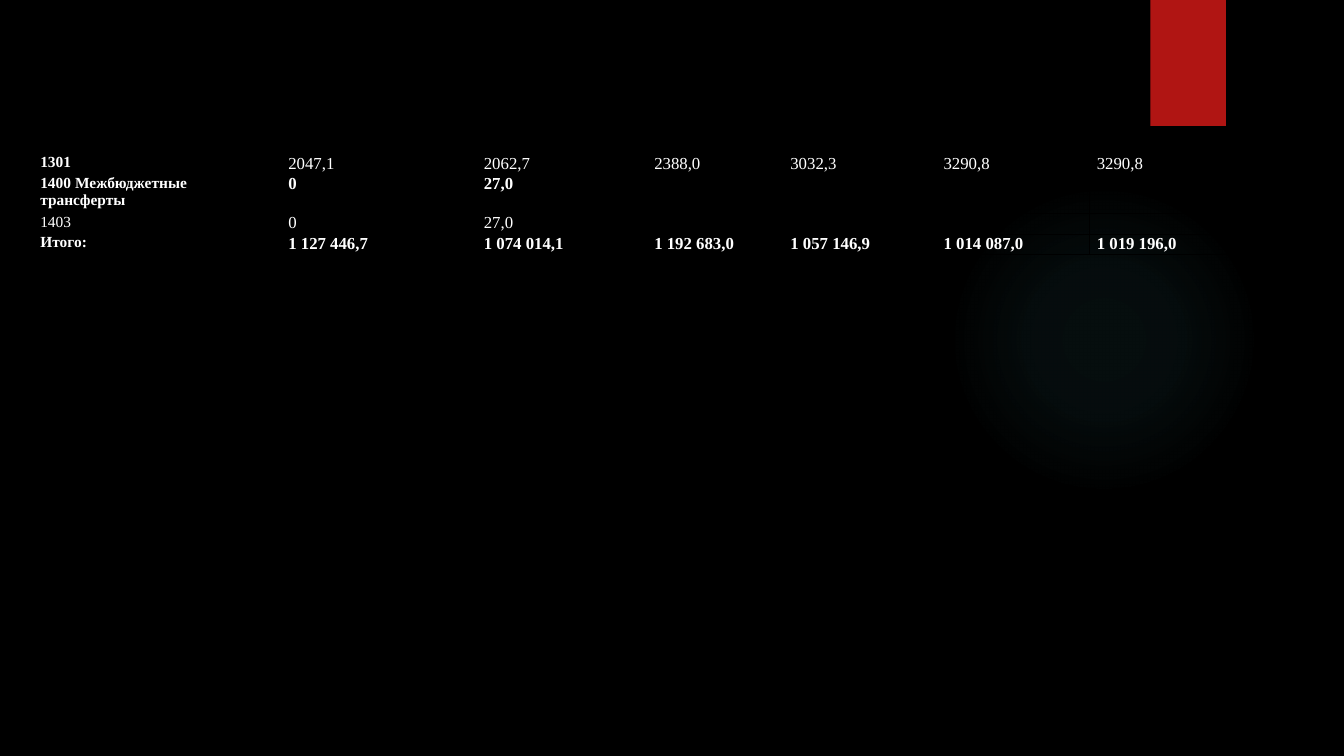
"""Builds the closing budget table slide with a red tab and a soft glow."""
from dataclasses import dataclass

from lxml import etree
from pptx import Presentation
from pptx.dml.color import RGBColor
from pptx.enum import shapes
from pptx.oxml import ns
from pptx.util import Inches, Pt

BUDGET = [
    ("1301", "2047,1", "2062,7", "2388,0", "3032,3", "3290,8", "3290,8"),
    ("1400 Межбюджетные трансферты", "0", "27,0", "", "", "", ""),
    ("1403", "0", "27,0", "", "", "", ""),
    ("Итого:", "1 127 446,7", "1 074 014,1", "1 192 683,0",
     "1 057 146,9", "1 014 087,0", "1 019 196,0"),
]
BOLD_CELLS = [{0}, set(range(7)), set(), set(range(7))]
COLUMN_WIDTHS = (2.46, 1.94, 1.69, 1.35, 1.52, 1.52, 1.52)
ROW_HEIGHTS = (0.2, 0.39, 0.2, 0.2)
GLOW_STOPS = ((0, 7), (36, 6), (69, 0))


@dataclass(frozen=True)
class Theme:
    background: str = "000000"
    ink: str = "FFFFFF"
    tab: str = "B01513"
    glow: str = "50B9C1"
    border: str = "000000"
    font: str = "Times New Roman"
    label_size: int = 11
    value_size: int = 12


THEME = Theme()


def add_xml(parent, tag, **attributes):
    return etree.SubElement(parent, ns.qn(tag), attributes)


def add_plain_shape(slide, kind, left, top, width, height, color):
    shape = slide.shapes.add_shape(
        kind, Inches(left), Inches(top), Inches(width), Inches(height))
    shape.shadow.inherit = False
    shape.line.fill.background()
    shape.fill.solid()
    shape.fill.fore_color.rgb = RGBColor.from_string(color)
    return shape


def fade_from_center(shape):
    solid = shape._element.spPr.find(ns.qn("a:solidFill"))
    gradient = etree.Element(ns.qn("a:gradFill"), rotWithShape="1")
    stops = add_xml(gradient, "a:gsLst")
    for position, opacity in GLOW_STOPS:
        stop = add_xml(stops, "a:gs", pos=str(position * 1000))
        color = add_xml(stop, "a:srgbClr", val=THEME.glow)
        add_xml(color, "a:alpha", val=str(opacity * 1000))
    center = add_xml(gradient, "a:path", path="circle")
    add_xml(center, "a:fillToRect", **dict.fromkeys("ltrb", "50000"))
    solid.getparent().replace(solid, gradient)


def format_cell(cell, words, size, bold):
    cell.margin_left = cell.margin_right = Inches(0.07)
    cell.margin_top = cell.margin_bottom = 0
    properties = cell._tc.get_or_add_tcPr()
    for side in ("a:lnL", "a:lnR", "a:lnT", "a:lnB"):
        line = add_xml(properties, side, w=str(Pt(1)))
        add_xml(add_xml(line, "a:solidFill"), "a:srgbClr", val=THEME.border)
    cell.fill.background()
    paragraph = cell.text_frame.paragraphs[0]
    if not words:
        add_xml(paragraph._p, "a:endParaRPr", sz=str(size * 100))
        return
    run = paragraph.add_run()
    run.text = words
    run.font.name = THEME.font
    run.font.size = Pt(size)
    run.font.bold = bold
    run.font.color.rgb = RGBColor.from_string(THEME.ink)


def add_budget(slide):
    frame = slide.shapes.add_table(
        len(BUDGET), len(COLUMN_WIDTHS), Inches(0.33), Inches(1.53),
        Inches(sum(COLUMN_WIDTHS)), Inches(sum(ROW_HEIGHTS)))
    budget = frame.table
    budget.first_row = budget.horz_banding = False
    for column, width in zip(budget.columns, COLUMN_WIDTHS):
        column.width = Inches(width)
    for row, height, entries, bold in zip(
            budget.rows, ROW_HEIGHTS, BUDGET, BOLD_CELLS):
        row.height = Inches(height)
        for index, (cell, words) in enumerate(zip(row.cells, entries)):
            size = THEME.value_size if index else THEME.label_size
            format_cell(cell, words, size, index in bold)


def main():
    deck = Presentation()
    deck.slide_width, deck.slide_height = Inches(13.33), Inches(7.5)
    slide = deck.slides.add_slide(deck.slide_layouts[6])
    slide.background.fill.solid()
    slide.background.fill.fore_color.rgb = RGBColor.from_string(THEME.background)
    glow = add_plain_shape(slide, shapes.MSO_SHAPE.OVAL,
                           9.41, 1.83, 3.08, 3.08, THEME.glow)
    fade_from_center(glow)
    add_plain_shape(slide, shapes.MSO_SHAPE.RECTANGLE,
                    11.41, 0, 0.75, 1.25, THEME.tab)
    add_budget(slide)
    deck.save("out.pptx")


if __name__ == "__main__":
    main()
